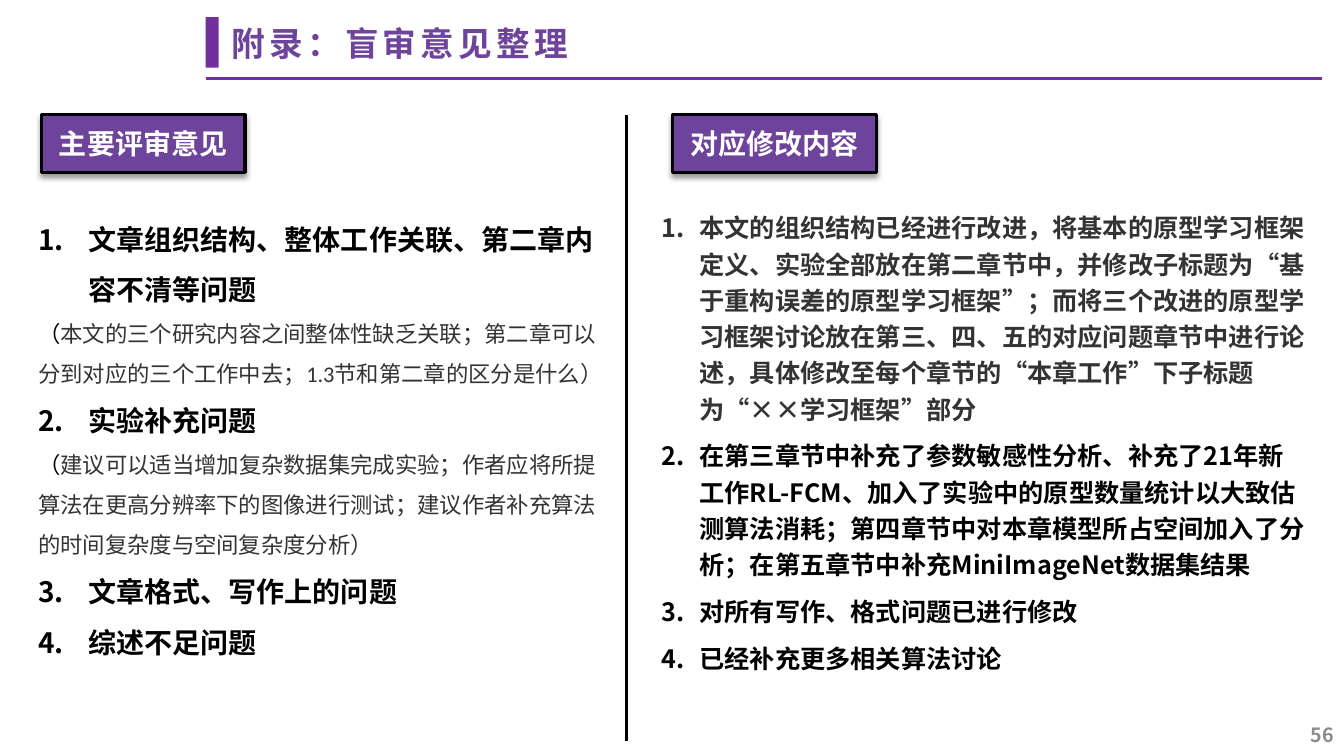
from lxml import etree
from pptx import Presentation
from pptx import util as u
from pptx.dml.color import RGBColor
from pptx.enum import shapes, text
from pptx.oxml.ns import qn

HEADING_FONT, NOTE_FONT = "Noto Sans CJK SC", "Calibri"
PURPLE, RULE_PURPLE = "6D439B", "7030A0"
BLACK, DARK, GREY, WHITE = "000000", "333333", "8C8C8C", "FFFFFF"


def colour(value):
    return RGBColor.from_string(value)


def add_xml(parent, tag, **attributes):
    return etree.SubElement(parent, qn(tag), attributes)


class SlideBuilder:
    """Holds the style and the slide; lengths are percentages of the slide."""

    def __init__(self, presentation):
        self.width = presentation.slide_width
        self.height = presentation.slide_height
        self.slide = presentation.slides.add_slide(presentation.slide_layouts[6])

    def x(self, share):
        return round(self.width * share / 100)

    def y(self, share):
        return round(self.height * share / 100)

    def box(self, left, top, width, height):
        return self.x(left), self.y(top), self.x(width), self.y(height)

    def style(self, font, size, ink, bold=True, name=HEADING_FONT):
        font.size, font.bold, font.name = u.Pt(size), bold, name
        font.color.rgb = colour(ink)
        # East Asian typeface follows the Latin one
        font._element.find(qn("a:latin")).addnext(
            etree.Element(qn("a:ea"), typeface=HEADING_FONT))

    def line(self, x1, y1, x2, y2, ink):
        connector = self.slide.shapes.add_connector(
            shapes.MSO_CONNECTOR.STRAIGHT,
            self.x(x1), self.y(y1), self.x(x2), self.y(y2))
        connector.line.color.rgb = colour(ink)
        connector.line.width = u.Pt(2.25)
        add_xml(connector._element.spPr, "a:effectLst")

    def rectangle(self, area, fill):
        shape = self.slide.shapes.add_shape(
            shapes.MSO_SHAPE.RECTANGLE, *self.box(*area))
        shape.shadow.inherit = False
        shape.fill.solid()
        shape.fill.fore_color.rgb = colour(fill)
        shape.line.fill.background()
        return shape

    def label(self, area, words):
        shape = self.rectangle(area, PURPLE)
        shape.line.color.rgb = colour(BLACK)
        shape.line.width = u.Pt(2.25)
        effects = shape._element.spPr.find(qn("a:effectLst"))
        shadow = add_xml(effects, "a:outerShdw", blurRad=str(u.Pt(4)),
                         dist=str(u.Pt(3)), dir="5400000", rotWithShape="0")
        add_xml(add_xml(shadow, "a:srgbClr", val=BLACK), "a:alpha", val="40000")
        shape.text_frame.vertical_anchor = text.MSO_ANCHOR.MIDDLE
        paragraph = shape.text_frame.paragraphs[0]
        paragraph.text, paragraph.alignment = words, text.PP_ALIGN.CENTER
        self.style(paragraph.font, 20, WHITE)

    def frame(self, area, anchor=text.MSO_ANCHOR.TOP):
        frame = self.slide.shapes.add_textbox(*self.box(*area)).text_frame
        frame.word_wrap = True
        frame.vertical_anchor = anchor
        return frame

    def single(self, area, words, size, ink, align=text.PP_ALIGN.LEFT, tracking=0):
        paragraph = self.frame(area, text.MSO_ANCHOR.MIDDLE).paragraphs[0]
        paragraph.text, paragraph.alignment = words, align
        paragraph.line_spacing = 0.9
        self.style(paragraph.font, size, ink)
        paragraph.font._element.set("spc", str(tracking * 100))

    def next_paragraph(self, frame, spacing):
        first = frame.paragraphs[0]
        paragraph = frame.add_paragraph() if first.runs else first
        paragraph.line_spacing = spacing
        return paragraph

    def item(self, frame, words, size, ink, spacing, indent, start=1, after=0):
        paragraph = self.next_paragraph(frame, spacing)
        paragraph.space_after = u.Pt(after)
        properties = paragraph._p.get_or_add_pPr()
        properties.set("marL", str(u.Inches(indent)))
        properties.set("indent", str(-u.Inches(indent)))
        add_xml(properties, "a:buFont", typeface=HEADING_FONT)
        number = add_xml(properties, "a:buAutoNum", type="arabicPeriod")
        if start > 1:
            number.set("startAt", str(start))
        paragraph.add_run().text = words
        self.style(paragraph.font, size, ink)

    def note(self, frame, words):
        paragraph = self.next_paragraph(frame, 1.5)
        for part, ink, name in (("（", BLACK, HEADING_FONT),
                                (words, DARK, NOTE_FONT)):
            run = paragraph.add_run()
            run.text = part
            self.style(run.font, 16, ink, False, name)


COMMENTS = [
    (1, "文章组织结构、整体工作关联、第二章内容不清等问题",
     "本文的三个研究内容之间整体性缺乏关联；第二章可以分到对应的三个工作中去；"
     "1.3节和第二章的区分是什么）"),
    (2, "实验补充问题",
     "建议可以适当增加复杂数据集完成实验；作者应将所提算法在更高分辨率下的图像进行测试；"
     "建议作者补充算法的时间复杂度与空间复杂度分析）"),
    (3, "文章格式、写作上的问题", None),
    (3, "综述不足问题", None),
]
CHANGES = [
    (DARK, "本文的组织结构已经进行改进，将基本的原型学习框架定义、实验全部放在第二章节中，"
           "并修改子标题为“基于重构误差的原型学习框架”；而将三个改进的原型学习框架讨论放在"
           "第三、四、五的对应问题章节中进行论述，具体修改至每个章节的“本章工作”下子标题为"
           "“××学习框架”部分"),
    (BLACK, "在第三章节中补充了参数敏感性分析、补充了21年新工作RL-FCM、加入了实验中的原型"
            "数量统计以大致估测算法消耗；第四章节中对本章模型所占空间加入了分析；"
            "在第五章节中补充MiniImageNet数据集结果"),
    (BLACK, "对所有写作、格式问题已进行修改"),
    (BLACK, "已经补充更多相关算法讨论"),
]


def main():
    presentation = Presentation()
    presentation.slide_width = u.Inches(13.33)
    presentation.slide_height = u.Inches(7.5)
    builder = SlideBuilder(presentation)

    # Header and page number
    builder.line(15.3, 10.4, 98.35, 10.4, RULE_PURPLE)
    builder.rectangle((15.3, 2.27, 0.98, 6.67), RULE_PURPLE)
    builder.single((77.5, 94.67, 22.5, 5.33), "56", 14, GREY, text.PP_ALIGN.RIGHT)
    builder.single((16.5, 2.8, 82.75, 6.53), "附录：盲审意见整理", 24, PURPLE, tracking=3)

    # Column labels and divider
    for left, words in ((3.08, "主要评审意见"), (50.04, "对应修改内容")):
        builder.label((left, 15.2, 15.15, 7.6), words)
    builder.line(46.59, 15.2, 46.59, 98, BLACK)

    # Review comments
    comments = builder.frame((2.1, 26.53, 43.89, 60.93))
    for start, heading, detail in COMMENTS:
        builder.item(comments, heading, 20, BLACK, 1.5, 0.5, start)
        if detail:
            builder.note(comments, detail)

    # Matching changes
    changes = builder.frame((48.46, 26.67, 49.44, 71.47))
    for ink, words in CHANGES:
        builder.item(changes, words, 18, ink, 1.2, 0.38, after=7.5)

    presentation.save("out.pptx")


if __name__ == "__main__":
    main()
